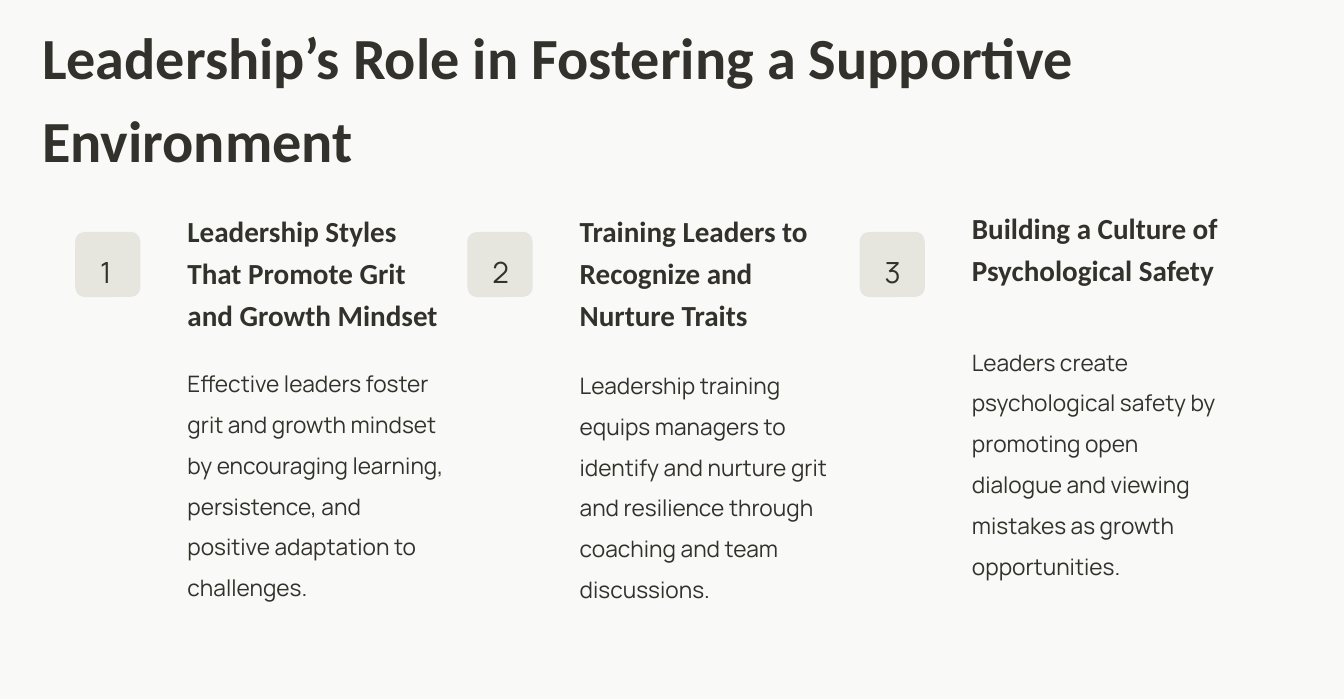
from pptx import Presentation
from pptx.dml.color import RGBColor
from pptx.enum import shapes, text
from pptx.util import Pt

PAPER = RGBColor(0xF9, 0xFA, 0xF7)
BADGE = RGBColor(0xE6, 0xE6, 0xDF)
INK = RGBColor(0x33, 0x31, 0x2B)

SLIDE_WIDTH, SLIDE_HEIGHT = 830.88, 432
COLUMN_LEFT, COLUMN_TOP, COLUMN_PITCH = 46.5, 94.3, 242.5
TEXT_INDENT, TEXT_WIDTH = 69.4, 161.3
BADGE_SIZE = 40.3

TITLE = {"name": "Calibri", "size": Pt(36), "bold": True}
HEADING = {"name": "Calibri", "size": Pt(18), "bold": True}
NUMBER = {"name": "Manrope", "size": Pt(18)}
BODY = {"name": "Manrope", "size": Pt(14)}

# heading, heading height, body, body offset from column top, body height
COLUMNS = [
    ("Leadership Styles That Promote Grit and Growth Mindset", 144,
     "Effective leaders foster grit and growth mindset by encouraging learning, "
     "persistence, and positive adaptation to challenges.", 107.3, 188.6),
    ("Training Leaders to Recognize and Nurture Traits", 144,
     "Leadership training equips managers to identify and nurture grit and "
     "resilience through coaching and team discussions.", 121.7, 162),
    ("Building a Culture of Psychological Safety", 115.2,
     "Leaders create psychological safety by promoting open dialogue and viewing "
     "mistakes as growth opportunities.", 107.3, 162),
]


def add_block(page, kind, left, top, width, height, color):
    block = page.shapes.add_shape(kind, Pt(left), Pt(top), Pt(width), Pt(height))
    block.shadow.inherit = False
    block.fill.solid()
    block.fill.fore_color.rgb = color
    block.line.fill.background()
    return block


def add_text(page, words, left, top, width, height, style, spacing):
    box = page.shapes.add_textbox(Pt(left), Pt(top), Pt(width), Pt(height))
    frame = box.text_frame
    settings = {"word_wrap": True, "vertical_anchor": text.MSO_ANCHOR.MIDDLE,
                "margin_left": 0, "margin_top": 0,
                "margin_right": 0, "margin_bottom": 0}
    for key, value in settings.items():
        setattr(frame, key, value)
    para = frame.paragraphs[0]
    para.line_spacing = spacing
    span = para.add_run()
    span.text = words
    for key, value in style.items():
        setattr(span.font, key, value)
    span.font.color.rgb = INK


def add_header(page, left, top, width, height):
    add_text(page, "Leadership’s Role in Fostering a Supportive Environment",
             left, top, width, height, TITLE, 1.2)


def add_column(page, left, top, number, content):
    heading, heading_height, body, body_offset, body_height = content
    # Numbered badge
    badge = add_block(page, shapes.MSO_SHAPE.ROUNDED_RECTANGLE, left, top + 49,
                      BADGE_SIZE, BADGE_SIZE, BADGE)
    badge.adjustments[0] = 0.15
    add_text(page, str(number), left + 15.4, top + 54.7, 8.6, 27.4, NUMBER, 1.5)
    # Heading and body
    text_left = left + TEXT_INDENT
    add_text(page, heading, text_left, top, TEXT_WIDTH, heading_height, HEADING, 1.2)
    add_text(page, body, text_left, top + body_offset, TEXT_WIDTH, body_height,
             BODY, 1.5)


def main():
    deck = Presentation()
    deck.slide_width, deck.slide_height = Pt(SLIDE_WIDTH), Pt(SLIDE_HEIGHT)
    page = deck.slides.add_slide(deck.slide_layouts[6])
    # Backdrop
    add_block(page, shapes.MSO_SHAPE.RECTANGLE, 0, 0, SLIDE_WIDTH, SLIDE_HEIGHT, PAPER)
    add_header(page, 26, 3.6, 705, 105)
    for index, content in enumerate(COLUMNS):
        add_column(page, COLUMN_LEFT + index * COLUMN_PITCH, COLUMN_TOP,
                   index + 1, content)
    deck.save("out.pptx")


if __name__ == "__main__":
    main()
